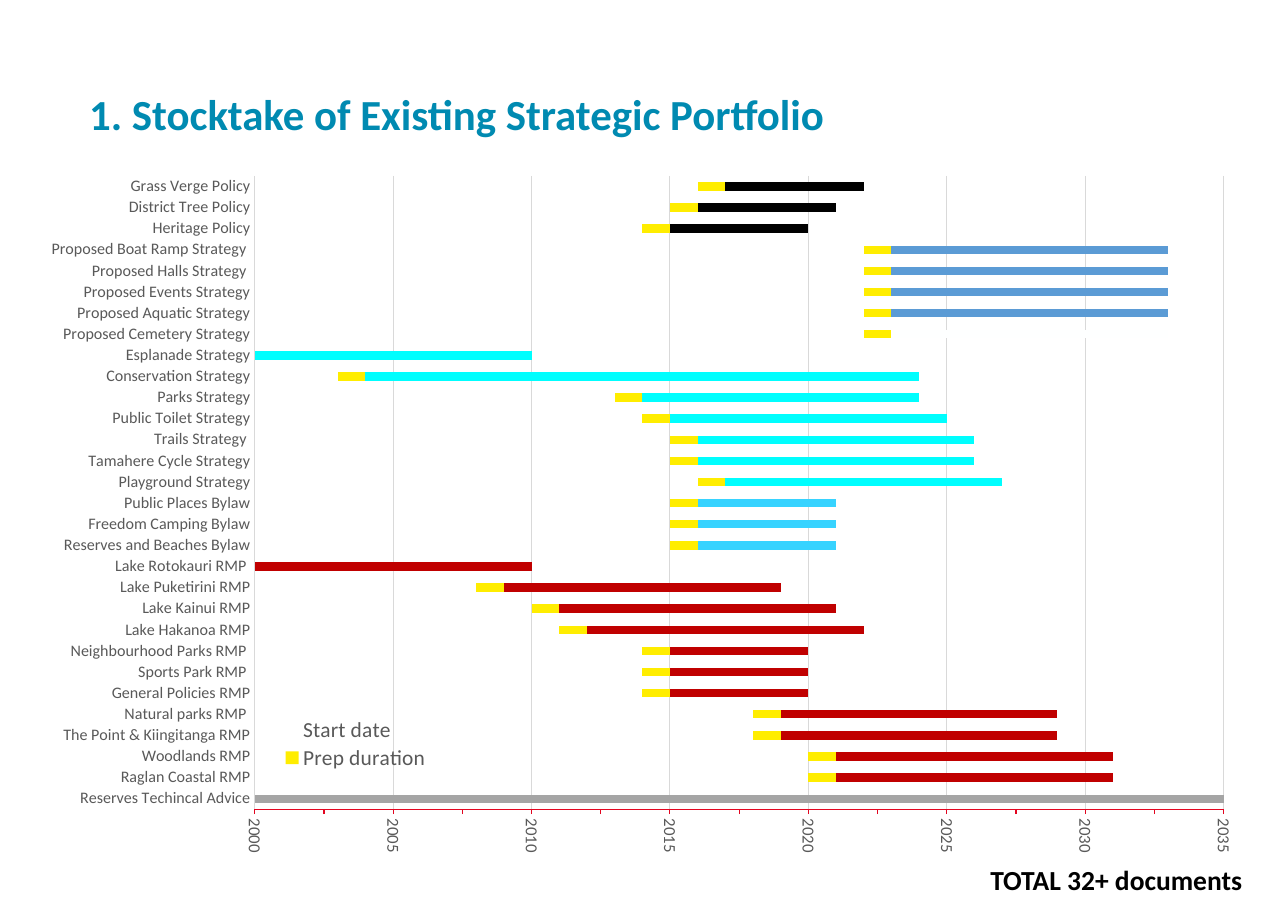
"""Build the strategic portfolio timeline slide."""
from lxml import etree
from pptx import Presentation
from pptx.chart.data import CategoryChartData
from pptx.dml.color import RGBColor
from pptx.enum.chart import XL_CHART_TYPE, XL_LEGEND_POSITION, XL_TICK_MARK
from pptx.enum.text import MSO_ANCHOR
from pptx.oxml import parse_xml
from pptx.oxml.ns import nsdecls, qn
from pptx.util import Inches, Pt

STACKED_BAR = XL_CHART_TYPE.BAR_STACKED
LEGEND_RIGHT = XL_LEGEND_POSITION.RIGHT
TICK_NONE, TICK_OUTSIDE = XL_TICK_MARK.NONE, XL_TICK_MARK.OUTSIDE
MIDDLE = MSO_ANCHOR.MIDDLE
FONT = "Calibri"
COLORS = {
    "title": "008AB1", "total": "000000", "label": "595959",
    "grid": "D9D9D9", "axis": "E30520", "prep": "FFED00",
    "advice": "A5A5A5", "plan": "C00000", "bylaw": "37D3FF",
    "strategy": "00FEFE", "cemetery": "FEFFFF", "proposed": "5B9BD5",
    "policy": "000000",
}
DOCUMENTS = [
    ("Reserves Techincal Advice", 2000, 0, 50, "advice"),
    ("Raglan Coastal RMP", 2020, 1, 10, "plan"),
    ("Woodlands RMP", 2020, 1, 10, "plan"),
    ("The Point & Kiingitanga RMP", 2018, 1, 10, "plan"),
    ("Natural parks RMP ", 2018, 1, 10, "plan"),
    ("General Policies RMP", 2014, 1, 5, "plan"),
    ("Sports Park RMP ", 2014, 1, 5, "plan"),
    ("Neighbourhood Parks RMP ", 2014, 1, 5, "plan"),
    ("Lake Hakanoa RMP", 2011, 1, 10, "plan"),
    ("Lake Kainui RMP", 2010, 1, 10, "plan"),
    ("Lake Puketirini RMP", 2008, 1, 10, "plan"),
    ("Lake Rotokauri RMP ", 1999, 1, 10, "plan"),
    ("Reserves and Beaches Bylaw", 2015, 1, 5, "bylaw"),
    ("Freedom Camping Bylaw", 2015, 1, 5, "bylaw"),
    ("Public Places Bylaw", 2015, 1, 5, "bylaw"),
    ("Playground Strategy", 2016, 1, 10, "strategy"),
    ("Tamahere Cycle Strategy", 2015, 1, 10, "strategy"),
    ("Trails Strategy ", 2015, 1, 10, "strategy"),
    ("Public Toilet Strategy", 2014, 1, 10, "strategy"),
    ("Parks Strategy", 2013, 1, 10, "strategy"),
    ("Conservation Strategy", 2003, 1, 20, "strategy"),
    ("Esplanade Strategy", 1999, 1, 10, "strategy"),
    ("Proposed Cemetery Strategy", 2022, 1, 10, "cemetery"),
    ("Proposed Aquatic Strategy", 2022, 1, 10, "proposed"),
    ("Proposed Events Strategy", 2022, 1, 10, "proposed"),
    ("Proposed Halls Strategy ", 2022, 1, 10, "proposed"),
    ("Proposed Boat Ramp Strategy ", 2022, 1, 10, "proposed"),
    ("Heritage Policy", 2014, 1, 5, "policy"),
    ("District Tree Policy", 2015, 1, 5, "policy"),
    ("Grass Verge Policy", 2016, 1, 5, "policy"),
]


def style_font(font, size, color, bold=False):
    """Set the face, size, colour and weight of a font."""
    font.name, font.size, font.bold = FONT, Pt(size), bold
    font.color.rgb = RGBColor.from_string(COLORS[color])


def place_part(part, index, target, x, y, w, h):
    """Give a chart part a fixed place as fractions of the chart."""
    for old in part.findall(qn("c:layout")):
        part.remove(old)
    layout = parse_xml(f"<c:layout {nsdecls('c')}><c:manualLayout/></c:layout>")
    settings = [("xMode", "edge"), ("yMode", "edge"), ("x", x), ("y", y), ("w", w), ("h", h)]
    if target:
        settings.insert(0, ("layoutTarget", target))
    for name, value in settings:
        etree.SubElement(layout[0], qn(f"c:{name}")).set("val", str(value))
    part.insert(index, layout)


deck = Presentation()
deck.slide_width, deck.slide_height = Inches(11.69), Inches(8.27)
page = deck.slides.add_slide(deck.slide_layouts[6])

names, starts, preps, lifespans, groups = zip(*DOCUMENTS)
data = CategoryChartData()
data.categories = names
data.add_series("Start date", starts)
data.add_series("Prep duration", preps)
data.add_series("lifespan", lifespans)
frame = page.shapes.add_chart(
    STACKED_BAR, Inches(0.27), Inches(1.45), Inches(11.16), Inches(6.39), data)
chart = frame.chart
chart.has_title = False
style_font(chart.font, 10, "total")

plot = chart.plots[0]
plot.gap_width, plot.overlap, plot.vary_by_categories = 150, 100, False
start, prep, lifespan = plot.series
start.format.fill.background()
for series, color in ((prep, "prep"), (lifespan, "advice")):
    series.format.fill.solid()
    series.format.fill.fore_color.rgb = RGBColor.from_string(COLORS[color])
for index, group in enumerate(groups):
    if group != "advice":
        fill = lifespan.points[index].format.fill
        fill.solid()
        fill.fore_color.rgb = RGBColor.from_string(COLORS[group])

years, documents = chart.value_axis, chart.category_axis
years.minimum_scale, years.maximum_scale = 2000, 2035
years.major_unit, years.minor_unit = 5, 2.5
years.has_major_gridlines = True
years.tick_labels.number_format = "General"
years.tick_labels.number_format_is_linked = False
for axis in (years, documents):
    axis.major_tick_mark = axis.minor_tick_mark = TICK_NONE
years.minor_tick_mark = TICK_OUTSIDE
style_font(years.tick_labels.font, 11, "label")
style_font(documents.tick_labels.font, 10.5, "label")
for line, color in ((years.format.line, "axis"), (documents.format.line, "grid"),
                    (years.major_gridlines.format.line, "grid")):
    line.width = Pt(0.75)
    line.color.rgb = RGBColor.from_string(COLORS[color])
year_text = chart.element.find(".//" + qn("c:valAx")).find(qn("c:txPr"))
year_text.find(qn("a:bodyPr")).set("rot", "5400000")
year_text.find(qn("a:bodyPr")).set("vert", "horz")

chart.has_legend = True
chart.legend.position = LEGEND_RIGHT
chart.legend.include_in_layout = False
style_font(chart.legend.font, 14, "label")
legend = chart.element.find(".//" + qn("c:legend"))
place_part(legend, 1, None, 0.19, 0.79, 0.15, 0.08)
legend.insert(1, parse_xml(
    f'<c:legendEntry {nsdecls("c")}><c:idx val="0"/><c:delete val="1"/></c:legendEntry>'))
plot_area = chart.element.find(".//" + qn("c:plotArea"))
place_part(plot_area, 0, "inner", 0.183, 0.023, 0.788, 0.9)

for text, left, top, width, height, size, color, inset in (
        ("1. Stocktake of Existing Strategic Portfolio", 0.81, 0.66, 10.08, 0.74, 28, "title", 0),
        ("TOTAL 32+ documents", 8.89, 7.78, 2.6, 0.4, 18, "total", 0.1)):
    box = page.shapes.add_textbox(Inches(left), Inches(top), Inches(width), Inches(height))
    body = box.text_frame
    body.word_wrap, body.vertical_anchor = True, MIDDLE
    body.margin_left = body.margin_right = Inches(inset)
    body.margin_top = body.margin_bottom = Inches(inset / 2)
    para = body.paragraphs[0]
    span = para.add_run()
    span.text = text
    style_font(span.font, size, color, bold=True)

deck.save("out.pptx")
